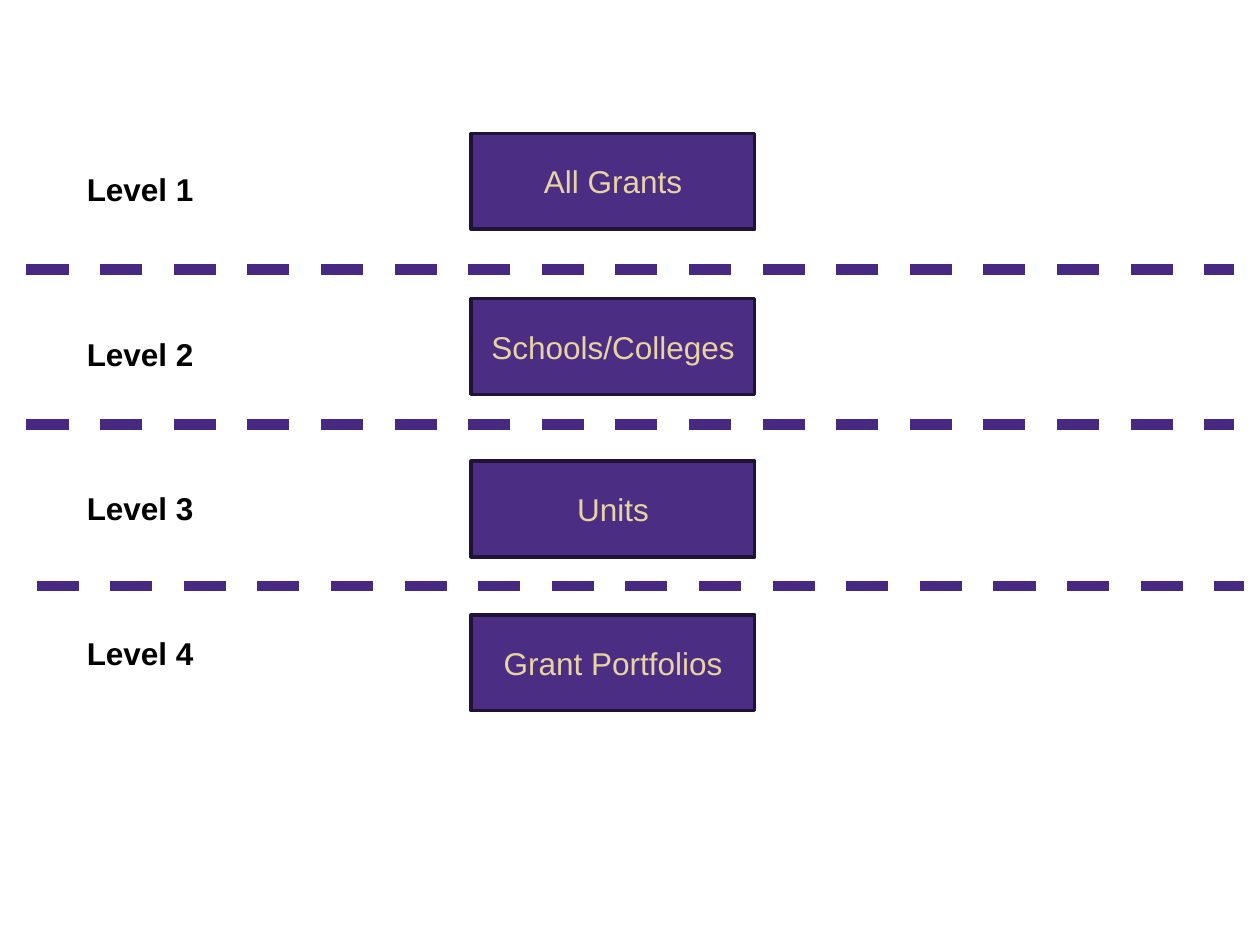
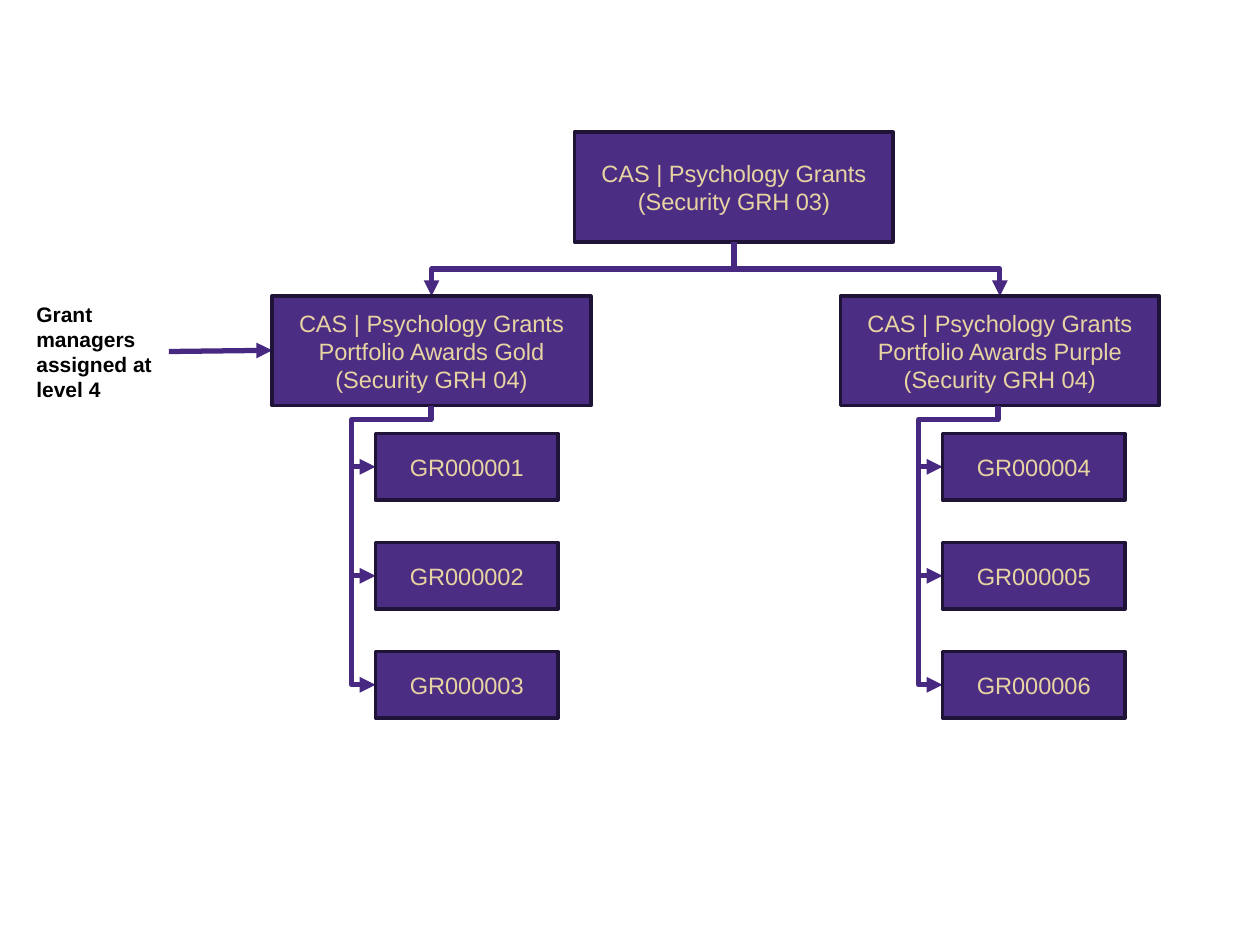
from dataclasses import dataclass
from itertools import pairwise

from lxml.etree import SubElement
from pptx import Presentation
from pptx.dml.color import RGBColor
from pptx.enum.dml import MSO_LINE_DASH_STYLE as Dash
from pptx.enum.shapes import MSO_CONNECTOR as Connector, MSO_SHAPE as Shape
from pptx.enum.text import MSO_ANCHOR as Anchor, MSO_AUTO_SIZE as AutoSize, PP_ALIGN as Align
from pptx.oxml.ns import qn
from pptx.util import Inches, Pt

# The grid covers the whole slide
COLUMNS, ROWS = 100, 75


@dataclass(frozen=True)
class Theme:
    font: str = "Arial"
    box_fill: RGBColor = RGBColor(0x4B, 0x2E, 0x83)
    box_border: RGBColor = RGBColor(0x1F, 0x13, 0x37)
    box_text: RGBColor = RGBColor(0xE8, 0xD3, 0xA2)
    line: RGBColor = RGBColor(0x48, 0x29, 0x81)
    label_text: RGBColor = RGBColor(0, 0, 0)
    large: float = 18
    medium: float = 13.5
    small: float = 12
    border_width: float = 2
    arrow_width: float = 3
    divider_width: float = 6


class Deck:
    """Holds the style and the current slide; lengths are grid columns and rows."""

    def __init__(self, theme):
        self.theme = theme
        self.presentation = Presentation()
        self.presentation.slide_width = Inches(10)
        self.presentation.slide_height = Inches(7.5)
        self.column = self.presentation.slide_width / COLUMNS
        self.row = self.presentation.slide_height / ROWS
        self.slide = None

    def new_slide(self):
        blank_layout = self.presentation.slide_layouts[6]
        self.slide = self.presentation.slides.add_slide(blank_layout)

    def place(self, left, top, width, height):
        return (round(left * self.column), round(top * self.row),
                round(width * self.column), round(height * self.row))

    def set_text(self, shape, text, size, color, bold=False):
        shape.text_frame.word_wrap = True
        paragraph = shape.text_frame.paragraphs[0]
        paragraph.text = text
        font = paragraph.font
        font.name, font.size, font.bold = self.theme.font, Pt(size), bold
        font.color.rgb = color
        return paragraph

    def box(self, text, left, top, width, height, size):
        shape = self.slide.shapes.add_shape(
            Shape.RECTANGLE, *self.place(left, top, width, height))
        shape.shadow.inherit = False
        shape.fill.solid()
        shape.fill.fore_color.rgb = self.theme.box_fill
        shape.line.color.rgb = self.theme.box_border
        shape.line.width = Pt(self.theme.border_width)
        shape.text_frame.vertical_anchor = Anchor.MIDDLE
        paragraph = self.set_text(shape, text, size, self.theme.box_text)
        paragraph.alignment = Align.CENTER

    def label(self, text, left, top, width, height, size):
        shape = self.slide.shapes.add_textbox(*self.place(left, top, width, height))
        self.set_text(shape, text, size, self.theme.label_text, bold=True)
        shape.text_frame.auto_size = AutoSize.SHAPE_TO_FIT_TEXT

    def connect(self, kind, start, end, width, dash=None, arrow=False):
        connector = self.slide.shapes.add_connector(kind, *self.place(*start, *end))
        connector.line.color.rgb = self.theme.line
        connector.line.width = Pt(width)
        if dash:
            connector.line.dash_style = dash
        properties = connector._element.spPr
        if arrow:
            SubElement(properties.find(qn("a:ln")), qn("a:tailEnd"), type="triangle")
        SubElement(properties, qn("a:effectLst"))
        return properties

    def divider(self, left, top, width):
        self.connect(Connector.STRAIGHT, (left, top), (left + width, top),
                     self.theme.divider_width, dash=Dash.DASH)

    def arrow(self, start, end):
        self.connect(Connector.STRAIGHT, start, end, self.theme.arrow_width, arrow=True)

    def elbow(self, start, end, preset, *adjustments):
        """Draw a bent arrow that leaves its start downwards."""
        (x1, y1), (x2, y2) = start, end
        middle_x, middle_y = (x1 + x2) / 2, (y1 + y2) / 2
        half_width, half_height = abs(y2 - y1) / 2, abs(x2 - x1) / 2
        properties = self.connect(
            Connector.ELBOW,
            (middle_x - half_width, middle_y - half_height),
            (middle_x + half_width, middle_y + half_height),
            self.theme.arrow_width, arrow=True)
        # A quarter turn makes the first leg vertical
        transform = properties.find(qn("a:xfrm"))
        transform.set("rot", str((90 if x2 < x1 else 270) * 60000))
        if x2 > x1:
            transform.set("flipH", "1")
        geometry = properties.find(qn("a:prstGeom"))
        geometry.set("prst", preset)
        guides = geometry.find(qn("a:avLst"))
        for number, share in enumerate(adjustments, 1):
            SubElement(guides, qn("a:gd"), name=f"adj{number}",
                       fmla=f"val {round(share * 100000)}")


def build_levels(deck):
    deck.new_slide()
    size = deck.theme.large
    # Box text, box top, label top
    levels = [
        ("All Grants", 10.6, 13),
        ("Schools/Colleges", 23.7, 26.1),
        ("Units", 36.6, 38.3),
        ("Grant Portfolios", 48.8, 49.8),
    ]
    for left, top in [(2.1, 21.4), (2.1, 33.7), (2.9, 46.5)]:
        deck.divider(left, top, 95.8)
    for number, (name, box_top, label_top) in enumerate(levels, 1):
        deck.label(f"Level {number}", 5.9, label_top, 16.1, 4, size)
        deck.box(name, 37.4, box_top, 22.5, 7.6, size)


def build_portfolios(deck):
    deck.new_slide()
    size = deck.theme.medium
    group_width, group_height, group_top = 25.3, 8.7, 23.5
    grant_width, grant_height, grant_top, grant_step = 14.5, 5.3, 34.4, 8.65
    trunk_gap, stem_offset = 1.9, 4.4

    # Parent unit
    unit_left, unit_top = 45.6, 10.5
    unit_bottom = (unit_left + group_width / 2, unit_top + group_height)
    deck.box("CAS | Psychology Grants (Security GRH 03)",
             unit_left, unit_top, group_width, group_height, size)

    # Note on the grant managers
    deck.label("Grant managers assigned at level 4", 1.9, 23.4, 11.5, 9.1, deck.theme.small)
    deck.arrow((13.4, 27.9), (21.6, 27.8))

    # Portfolios with their grants
    portfolios = [("Gold", 21.6, 29.8, 1), ("Purple", 66.7, 74.8, 4)]
    for name, left, grant_left, first_grant in portfolios:
        deck.elbow(unit_bottom, (left + group_width / 2, group_top), "bentConnector3", 0.5)
        deck.box(f"CAS | Psychology Grants Portfolio Awards {name} (Security GRH 04)",
                 left, group_top, group_width, group_height, size)

        tops = [grant_top + index * grant_step for index in range(3)]
        middles = [top + grant_height / 2 for top in tops]
        deck.elbow((grant_left + stem_offset, group_top + group_height),
                   (grant_left, middles[0]), "bentConnector4",
                   0.23, 1 + trunk_gap / stem_offset)
        for upper, lower in pairwise(middles):
            deck.elbow((grant_left - trunk_gap, upper), (grant_left, lower), "bentConnector2")
        for number, top in enumerate(tops, first_grant):
            deck.box(f"GR{number:06}", grant_left, top, grant_width, grant_height, size)


def main():
    deck = Deck(Theme())
    build_levels(deck)
    build_portfolios(deck)
    deck.presentation.save("out.pptx")


if __name__ == "__main__":
    main()
